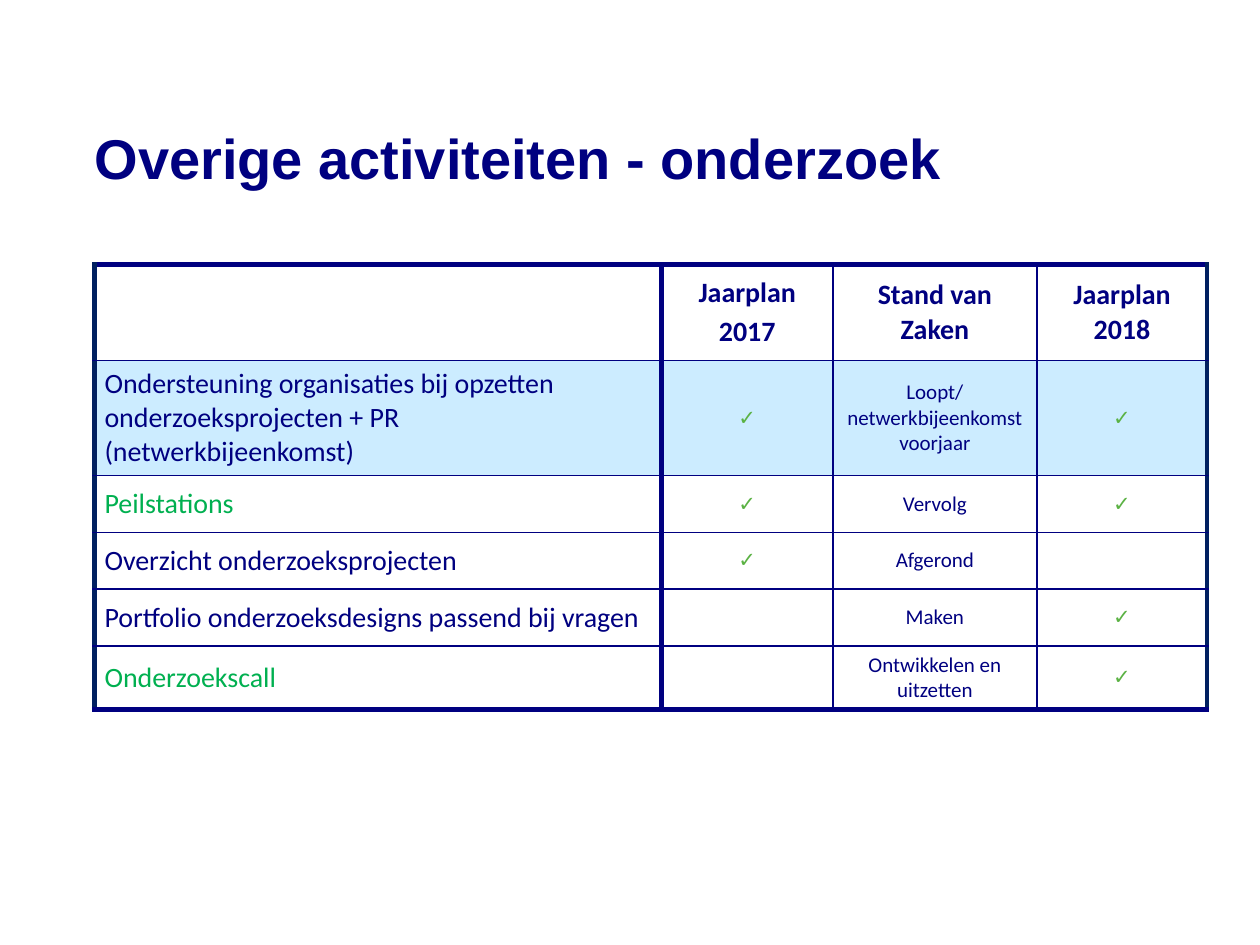
import dataclasses

import pptx
import pptx.dml.color
import pptx.enum.text
import pptx.oxml
import pptx.oxml.ns
import pptx.util

Inches = pptx.util.Inches
Pt = pptx.util.Pt
ALIGN = pptx.enum.text.PP_ALIGN
MIDDLE = pptx.enum.text.MSO_ANCHOR.MIDDLE


@dataclasses.dataclass(frozen=True)
class Theme:
    navy: str = "000080"
    edge: str = "002060"
    green: str = "00B050"
    tick: str = "5BB244"
    pale: str = "CCECFF"
    white: str = "FFFFFF"
    head: str = "Arial"
    body: str = "Calibri"
    big: int = 32
    mid: int = 16
    small: int = 12
    thick: int = 3
    thin: int = 1


THEME = Theme()
TICK = "✓"
WIDTHS = (4.5, 1.36, 1.62, 1.35)
HEIGHTS = (0.76, 0.45, 0.45, 0.45, 0.45, 0.45)
ROWS = (
    ("", "Jaarplan\n2017", "Stand van Zaken", "Jaarplan 2018"),
    ("Ondersteuning organisaties bij opzetten onderzoeksprojecten + PR "
     "(netwerkbijeenkomst)", TICK, "Loopt/netwerkbijeenkomst voorjaar", TICK),
    ("Peilstations", TICK, "Vervolg", TICK),
    ("Overzicht onderzoeksprojecten", TICK, "Afgerond", ""),
    ("Portfolio onderzoeksdesigns passend bij vragen", "", "Maken", TICK),
    ("Onderzoekscall", "", "Ontwikkelen en uitzetten", TICK),
)
GREEN_ROWS = (2, 5)
PALE_ROW = 1


def set_font(para, name, size, color, bold):
    font = para.font
    font.name = name
    font.size = Pt(size)
    font.bold = bold
    font.color.rgb = pptx.dml.color.RGBColor.from_string(color)


def add_title(slide, text):
    title = slide.shapes.title
    title.left, title.top = Inches(0.75), Inches(0.68)
    title.width, title.height = Inches(9.37), Inches(1.13)
    frame = title.text_frame
    frame.text = text
    frame.word_wrap = True
    frame.vertical_anchor = MIDDLE
    frame.margin_left = frame.margin_right = 0
    frame.margin_top = frame.margin_bottom = 0
    para = frame.paragraphs[0]
    para.alignment = ALIGN.LEFT
    set_font(para, THEME.head, THEME.big, THEME.navy, True)


def add_edge(cell, side, color, width):
    line = pptx.oxml.parse_xml(
        f'<a:ln{side} {pptx.oxml.ns.nsdecls("a")} w="{Pt(width)}">'
        f'<a:solidFill><a:srgbClr val="{color}"/></a:solidFill></a:ln{side}>')
    cell._tc.get_or_add_tcPr().append(line)


def add_edges(cell, row, col):
    # Thick lines frame the grid and set off the first column
    last_row, last_col = len(ROWS) - 1, len(WIDTHS) - 1
    heavy = {"L": col < 2, "R": col in (0, last_col),
             "T": row == 0, "B": row == last_row}
    outer = {"L": col == 0, "R": col == last_col}
    for side, thick in heavy.items():
        color = THEME.edge if outer.get(side) else THEME.navy
        add_edge(cell, side, color, THEME.thick if thick else THEME.thin)


def get_style(row, col, text):
    """Return the size, colour and weight of a cell's text."""
    if row == 0:
        return THEME.mid, THEME.navy, True
    if col == 0:
        color = THEME.green if row in GREEN_ROWS else THEME.navy
        return THEME.mid, color, False
    if text == TICK:
        return THEME.small, THEME.tick, True
    return THEME.small, THEME.navy, False


def fill_cell(cell, row, col, text):
    add_edges(cell, row, col)
    color = THEME.pale if row == PALE_ROW else THEME.white
    cell.fill.solid()
    cell.fill.fore_color.rgb = pptx.dml.color.RGBColor.from_string(color)
    cell.vertical_anchor = MIDDLE
    cell.margin_left = cell.margin_right = Inches(0.08)
    cell.margin_top = cell.margin_bottom = Inches(0.05)
    cell.text = text
    size, ink, bold = get_style(row, col, text)
    for i, para in enumerate(cell.text_frame.paragraphs):
        para.alignment = ALIGN.CENTER if col else ALIGN.LEFT
        para.space_before = Pt(0.2 * size if i else 0)
        set_font(para, THEME.body, size, ink, bold)


def add_grid(slide):
    frame = slide.shapes.add_table(
        len(ROWS), len(WIDTHS), Inches(0.75), Inches(2.1),
        Inches(sum(WIDTHS)), Inches(sum(HEIGHTS)))
    table = frame.table
    table.first_row = table.horz_banding = False
    for column, width in zip(table.columns, WIDTHS):
        column.width = Inches(width)
    for line, height in zip(table.rows, HEIGHTS):
        line.height = Inches(height)
    for row, texts in enumerate(ROWS):
        for col, text in enumerate(texts):
            fill_cell(table.cell(row, col), row, col, text)


def main():
    deck = pptx.Presentation()
    deck.slide_width, deck.slide_height = Inches(10), Inches(7.5)
    slide = deck.slides.add_slide(deck.slide_layouts[5])

    # Heading
    add_title(slide, "Overige activiteiten - onderzoek")

    # Plan per activity
    add_grid(slide)

    deck.save("out.pptx")


if __name__ == "__main__":
    main()
